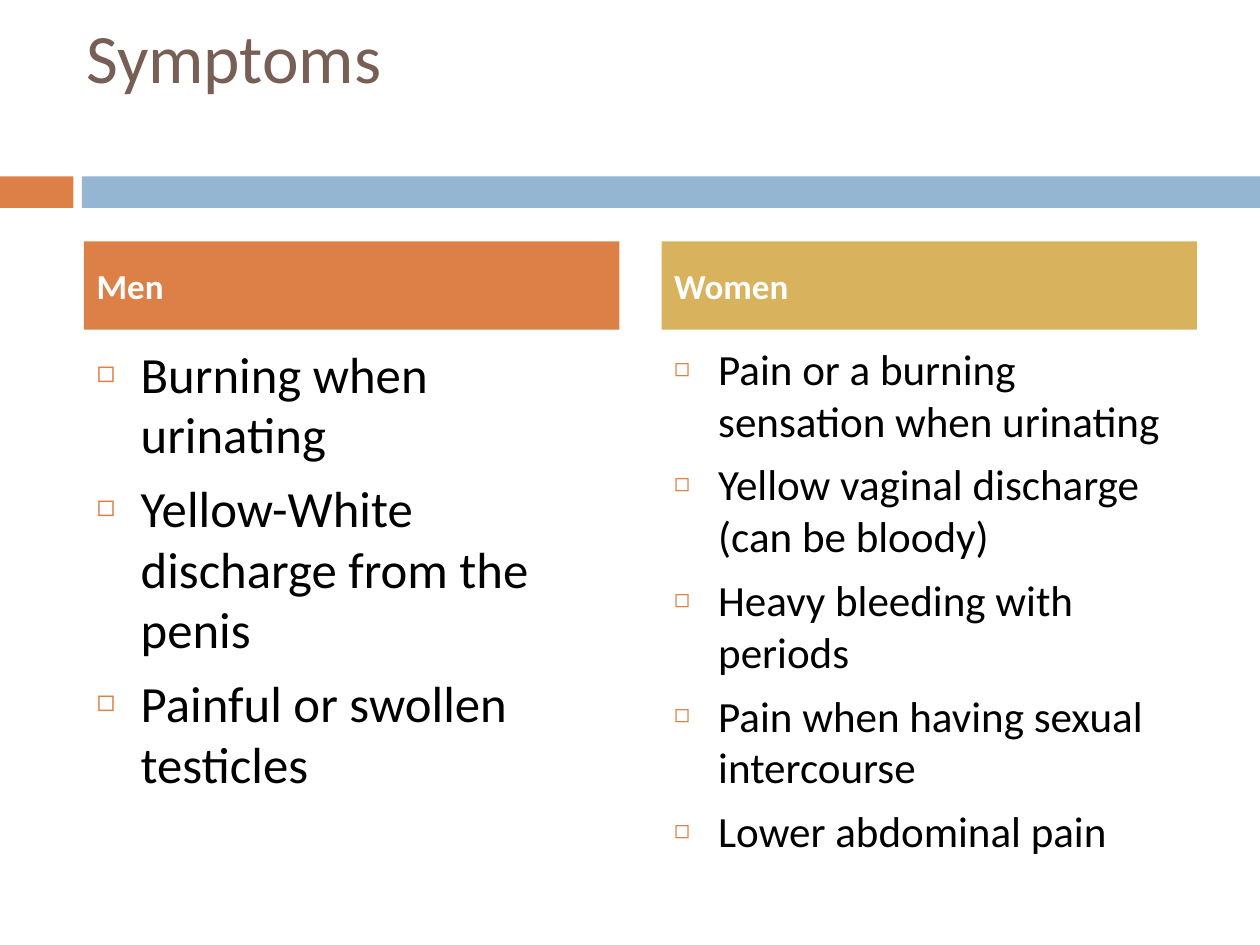
from lxml import etree
from pptx import Presentation
from pptx.dml.color import RGBColor
from pptx.enum.shapes import MSO_SHAPE
from pptx.enum.text import MSO_ANCHOR, MSO_AUTO_SIZE, PP_ALIGN
from pptx.oxml.ns import qn
from pptx.util import Pt

RECTANGLE = MSO_SHAPE.RECTANGLE
TOP, MIDDLE = MSO_ANCHOR.TOP, MSO_ANCHOR.MIDDLE
NO_AUTOFIT = MSO_AUTO_SIZE.NONE
LEFT = PP_ALIGN.LEFT

ORANGE = RGBColor(0xDD, 0x80, 0x47)
BLUE = RGBColor(0x94, 0xB6, 0xD2)
GOLD = RGBColor(0xD8, 0xB2, 0x5C)
BROWN = RGBColor(0x77, 0x5F, 0x55)
BLACK = RGBColor(0, 0, 0)
WHITE = RGBColor(0xFF, 0xFF, 0xFF)

FONT = "Calibri"
COMPARISON_LAYOUT = 4
TITLE_SIZE = 39.6
COLUMN_WIDTH = 306
INDENT = 25.2
MEN = ["Burning when urinating", "Yellow-White discharge from the penis",
       "Painful or swollen testicles"]
WOMEN = ["Pain or a burning sensation when urinating",
         "Yellow vaginal discharge (can be bloody)",
         "Heavy bleeding with periods",
         "Pain when having sexual intercourse", "Lower abdominal pain"]


def place(box, left, top, width, height):
    """Move and size a box, all in points."""
    box.left, box.top = Pt(left), Pt(top)
    box.width, box.height = Pt(width), Pt(height)


def prepare_text(box, anchor):
    """Set wrapping and anchoring and return the text frame."""
    frame = box.text_frame
    frame.word_wrap = True
    frame.auto_size = NO_AUTOFIT
    frame.vertical_anchor = anchor
    return frame


def add_span(para, text, size, color, bold=False):
    """Add one formatted run to a paragraph."""
    para.alignment = LEFT
    span = para.add_run()
    span.text = text
    font = span.font
    font.name, font.size, font.bold = FONT, Pt(size), bold
    font.color.rgb = color


def add_bar(page, left, width, color):
    """Draw one part of the band below the title."""
    bar = page.shapes.add_shape(RECTANGLE, Pt(left), Pt(100.8), Pt(width), Pt(18))
    bar.shadow.inherit = False
    bar.fill.solid()
    bar.fill.fore_color.rgb = color
    bar.line.fill.background()


def set_bullet(para):
    """Give a paragraph a hanging orange square."""
    properties = para._p.get_or_add_pPr()
    properties.set("marL", str(Pt(INDENT)))
    properties.set("indent", str(-Pt(INDENT)))
    bullet_color = etree.SubElement(properties, qn("a:buClr"))
    etree.SubElement(bullet_color, qn("a:srgbClr"), val=str(ORANGE))
    etree.SubElement(properties, qn("a:buSzPct"), val="60000")
    etree.SubElement(properties, qn("a:buChar"), char="◻")


def fill_title(box, text):
    """Write the title above an open second line."""
    place(box, 42, 21.6, 642, 68.4)
    para = prepare_text(box, MIDDLE).paragraphs[0]
    add_span(para, text, TITLE_SIZE, BROWN)
    para.add_line_break()
    etree.SubElement(para._p, qn("a:endParaRPr"), sz=str(int(TITLE_SIZE * 100)))


def fill_heading(box, left, text, color):
    """Write a column heading on a coloured field."""
    place(box, left, 138, COLUMN_WIDTH, 50.4)
    box.fill.solid()
    box.fill.fore_color.rgb = color
    para = prepare_text(box, MIDDLE).paragraphs[0]
    para.space_before = Pt(7)
    add_span(para, text, 20, WHITE, bold=True)


def fill_list(box, left, items, size):
    """Write the bulleted symptoms of one column."""
    place(box, left, 192, COLUMN_WIDTH, 282)
    frame = prepare_text(box, TOP)
    for index, item in enumerate(items):
        para = frame.add_paragraph() if index else frame.paragraphs[0]
        para.space_before = Pt(7)
        set_bullet(para)
        add_span(para, item, size, BLACK)


def main():
    """Build the symptoms slide."""
    deck = Presentation()
    deck.slide_width, deck.slide_height = Pt(720), Pt(540)
    page = deck.slides.add_slide(deck.slide_layouts[COMPARISON_LAYOUT])
    title, men_heading, men_list, women_heading, women_list = page.placeholders
    add_bar(page, 0, 42, ORANGE)
    add_bar(page, 46.8, 673.2, BLUE)
    fill_title(title, "Symptoms")
    columns = [(men_heading, men_list, 48, "Men", ORANGE, MEN, 29),
               (women_heading, women_list, 378, "Women", GOLD, WOMEN, 24.6)]
    for heading, body, left, name, color, items, size in columns:
        fill_heading(heading, left, name, color)
        fill_list(body, left, items, size)
    deck.save("out.pptx")


if __name__ == "__main__":
    main()
